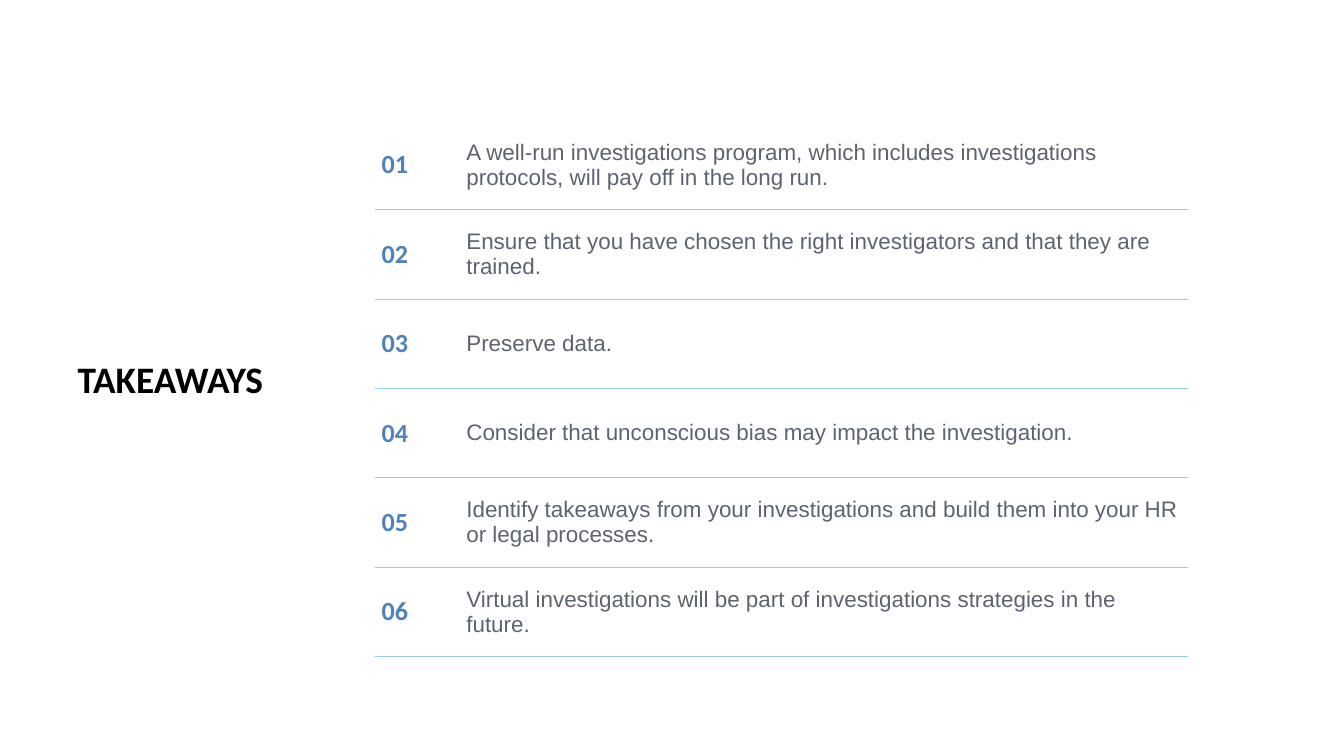
from lxml.etree import SubElement
from pptx import Presentation
from pptx.dml.color import RGBColor
from pptx.enum.text import MSO_ANCHOR, PP_ALIGN
from pptx.oxml.ns import qn
from pptx.util import Inches, Pt

HEADING = "TAKEAWAYS"
TAKEAWAYS = [
    "A well-run investigations program, which includes investigations protocols, will pay off in the long run.",
    "Ensure that you have chosen the right investigators and that they are trained.",
    "Preserve data.",
    "Consider that unconscious bias may impact the investigation.",
    "Identify takeaways from your investigations and build them into your HR or legal processes.",
    "Virtual investigations will be part of investigations strategies in the future.",
]
COLORS = {"heading": "000000", "number": "4F81BD", "takeaway": "5C6471", "rule": "93CDDD"}
FONTS = {
    "heading": {"name": "Calibri", "size": Pt(40), "bold": True},
    "number": {"name": "Calibri", "size": Pt(28), "bold": True},
    "takeaway": {"name": "Arial", "size": Pt(24), "bold": False},
}
COLUMN_WIDTHS = [1.26, 10.83]
ROW_HEIGHT = 1.33


def write(paragraph, text, role):
    run = paragraph.add_run()
    run.text = text
    for attribute, value in FONTS[role].items():
        setattr(run.font, attribute, value)
    run.font.color.rgb = RGBColor.from_string(COLORS[role])


def draw_rules(cell, sides):
    properties = cell._tc.get_or_add_tcPr()
    for position, side in enumerate(sides):
        line = SubElement(properties, qn(f"a:{side}"), w=str(Pt(1)))
        fill = SubElement(line, qn("a:solidFill"))
        SubElement(fill, qn("a:srgbClr"), val=COLORS["rule"])
        properties.insert(position, line)


def fill_cell(cell, text, role, sides):
    cell.vertical_anchor = MSO_ANCHOR.MIDDLE
    cell.fill.background()
    draw_rules(cell, sides)
    paragraph = cell.text_frame.paragraphs[0]
    paragraph.space_after = Pt(6)
    write(paragraph, text, role)


def main():
    deck = Presentation()
    deck.slide_width, deck.slide_height = Inches(20), Inches(11.25)
    slide = deck.slides.add_slide(deck.slide_layouts[5])

    heading = slide.shapes.title
    heading.left, heading.top = Inches(0.92), Inches(5.25)
    heading.width, heading.height = Inches(3.23), Inches(0.75)
    heading.text_frame.vertical_anchor = MSO_ANCHOR.TOP
    heading_line = heading.text_frame.paragraphs[0]
    heading_line.alignment = PP_ALIGN.CENTER
    write(heading_line, HEADING, "heading")

    table = slide.shapes.add_table(
        len(TAKEAWAYS), len(COLUMN_WIDTHS), Inches(5.58), Inches(1.79),
        Inches(sum(COLUMN_WIDTHS)), Inches(ROW_HEIGHT * len(TAKEAWAYS)),
    ).table
    table.first_row = table.horz_banding = False
    for column, width in zip(table.columns, COLUMN_WIDTHS):
        column.width = Inches(width)
    for index, takeaway in enumerate(TAKEAWAYS):
        table.rows[index].height = Inches(ROW_HEIGHT)
        sides = ["lnT", "lnB"] if index else ["lnB"]
        fill_cell(table.cell(index, 0), f"{index + 1:02}", "number", sides)
        fill_cell(table.cell(index, 1), takeaway, "takeaway", sides)

    deck.save("out.pptx")


if __name__ == "__main__":
    main()
